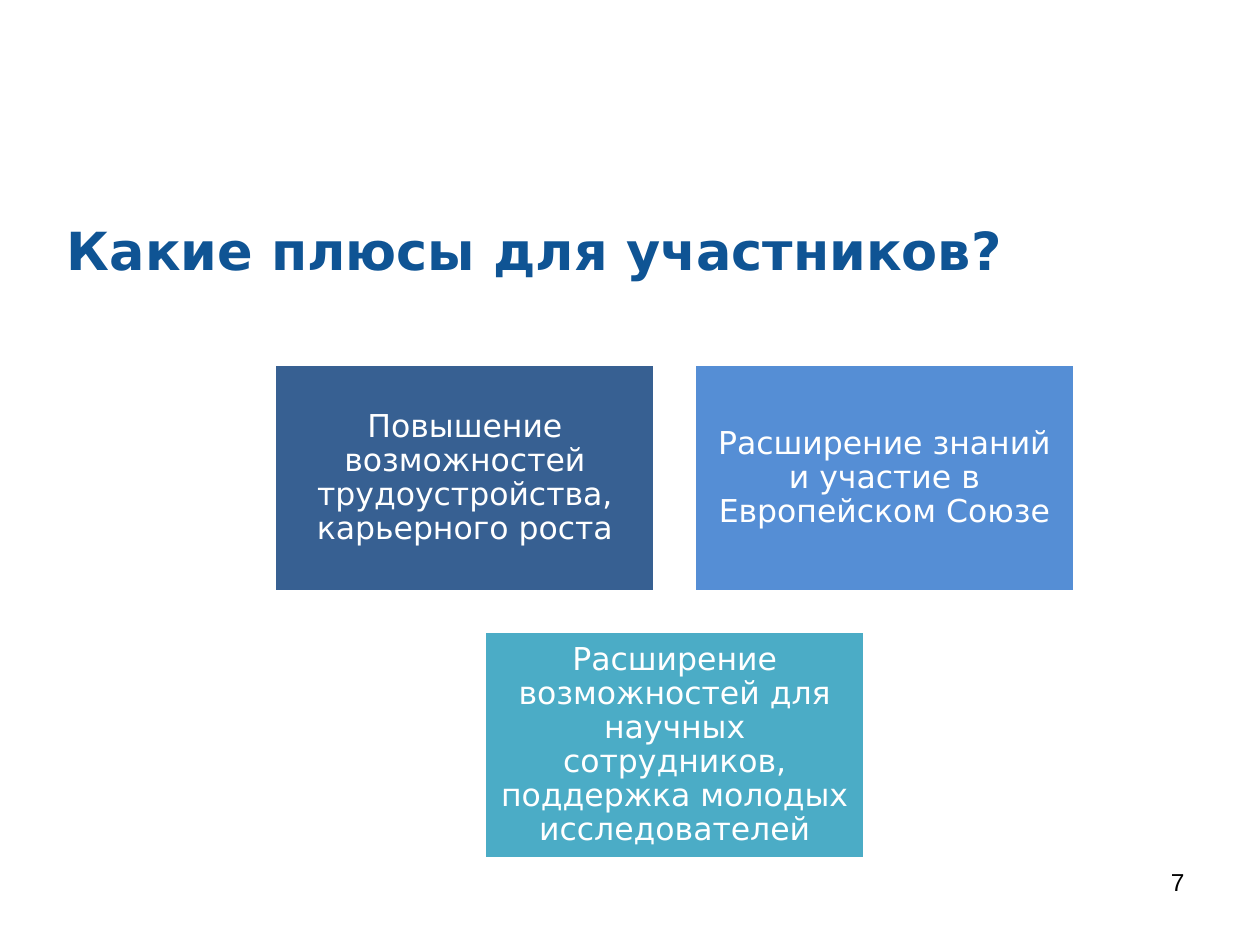
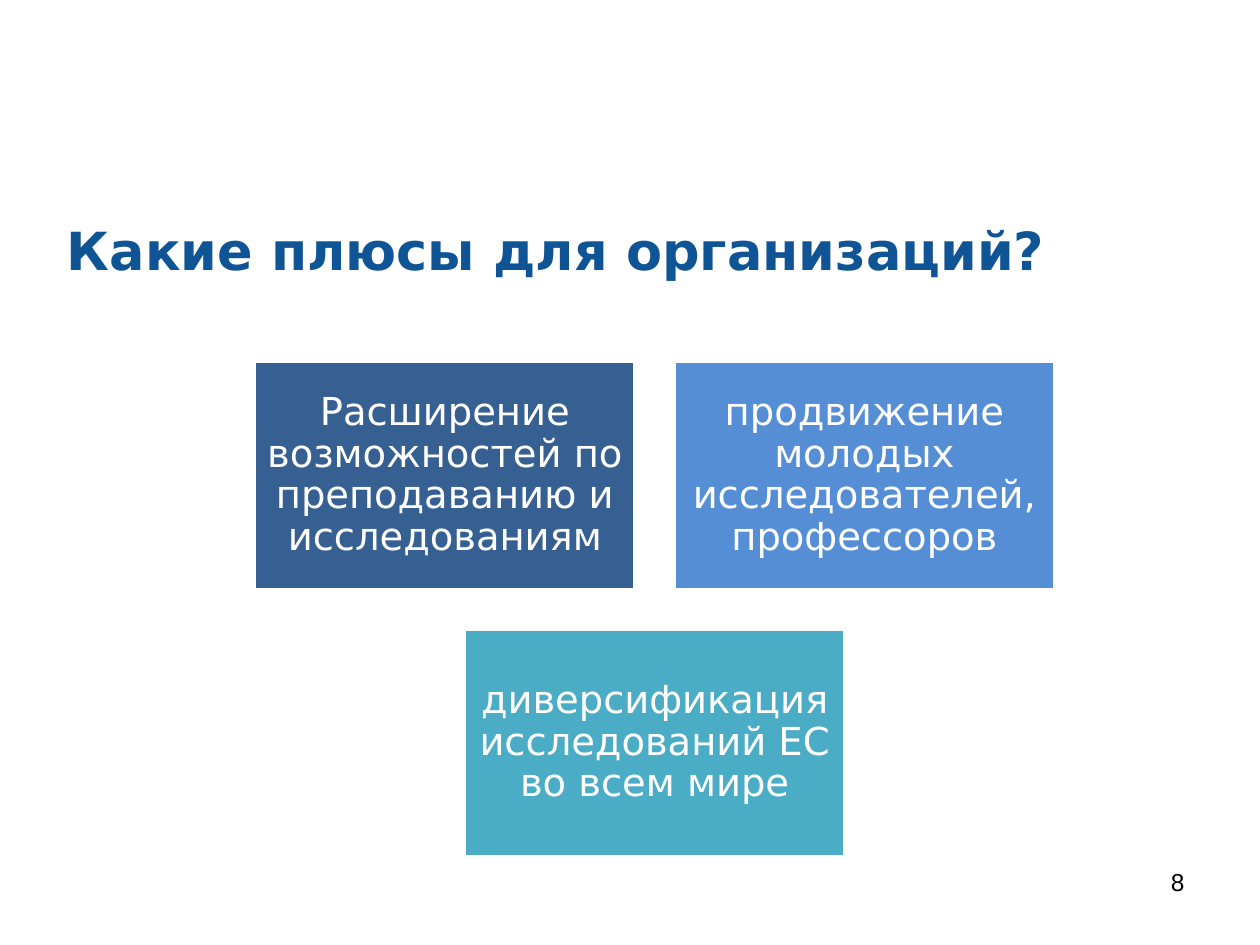
import pptx
import pptx.dml.color
import pptx.enum.shapes
import pptx.enum.text
import pptx.util

WIDTH, HEIGHT = 10, 7.5
TITLE_ONLY = 5
BODY_FONT, NUMBER_FONT = "DejaVu Sans", "Arial"
TITLE_COLOR, WHITE, BLACK = "0F5494", "FFFFFF", "000000"
CARD_COLORS = ("376092", "558ED5", "4BACC6")
CARD_WIDTH, CARD_HEIGHT, CARD_GAP = 3.02, 1.81, 0.31
ALIGN = pptx.enum.text.PP_ALIGN
ANCHOR = pptx.enum.text.MSO_ANCHOR

SLIDES = (
    dict(number=7, title="Какие плюсы для участников?",
         left=2.18, top=2.89, size=18, inset=0.07,
         cards=("Повышение возможностей трудоустройства, карьерного роста",
                "Расширение знаний и участие в Европейском Союзе",
                "Расширение возможностей для научных сотрудников, "
                "поддержка молодых исследователей")),
    dict(number=8, title="Какие плюсы для организаций?",
         left=2.02, top=2.87, size=22, inset=0.09,
         cards=("Расширение возможностей по преподаванию и исследованиям",
                "продвижение молодых исследователей, профессоров",
                "диверсификация исследований ЕС во всем мире")),
)


def color(value):
    return pptx.dml.color.RGBColor.from_string(value)


def inches(*lengths):
    return [pptx.util.Inches(length) for length in lengths]


def write(shape, text, *, size, fill, font=BODY_FONT, bold=False,
          align=ALIGN.LEFT, anchor=ANCHOR.TOP, spacing=1.0, insets=(0.1, 0.05)):
    """Put one formatted paragraph in a shape; insets are horizontal, vertical."""
    frame = shape.text_frame
    frame.word_wrap = True
    frame.auto_size = pptx.enum.text.MSO_AUTO_SIZE.NONE
    frame.vertical_anchor = anchor
    frame.margin_left = frame.margin_right = pptx.util.Inches(insets[0])
    frame.margin_top = frame.margin_bottom = pptx.util.Inches(insets[1])
    para = frame.paragraphs[0]
    para.alignment = align
    para.line_spacing = spacing
    span = para.add_run()
    span.text = text
    span.font.name = font
    span.font.size = pptx.util.Pt(size)
    span.font.bold = bold
    span.font.color.rgb = color(fill)


def add_title(page, text):
    title = page.shapes.title
    title.left, title.top, title.width, title.height = inches(0.43, 1.47, 9, 1.02)
    write(title, text, size=30, fill=TITLE_COLOR, bold=True, anchor=ANCHOR.MIDDLE)


def add_page_number(page, number):
    box = page.shapes.add_textbox(*inches(7.17, 6.83, 2.33, 0.52))
    write(box, str(number), size=14, fill=BLACK, font=NUMBER_FONT, align=ALIGN.RIGHT)


def add_card(page, left, top, text, fill, size, inset):
    card = page.shapes.add_shape(
        pptx.enum.shapes.MSO_SHAPE.RECTANGLE,
        *inches(left, top, CARD_WIDTH, CARD_HEIGHT))
    card.shadow.inherit = False
    card.fill.solid()
    card.fill.fore_color.rgb = color(fill)
    card.line.color.rgb = color(WHITE)
    card.line.width = pptx.util.Pt(2)
    write(card, text, size=size, fill=WHITE, align=ALIGN.CENTER,
          anchor=ANCHOR.MIDDLE, spacing=0.9, insets=(inset, inset))


def add_cards(page, texts, left, top, size, inset):
    """Two cards side by side, with the third centred below them."""
    cells = ((0, 0), (1, 0), (0.5, 1))
    for (column, row), text, fill in zip(cells, texts, CARD_COLORS):
        add_card(page, left + column * (CARD_WIDTH + CARD_GAP),
                 top + row * (CARD_HEIGHT + CARD_GAP), text, fill, size, inset)


def main():
    deck = pptx.Presentation()
    deck.slide_width, deck.slide_height = inches(WIDTH, HEIGHT)
    for content in SLIDES:
        page = deck.slides.add_slide(deck.slide_layouts[TITLE_ONLY])
        add_title(page, content["title"])
        add_page_number(page, content["number"])
        add_cards(page, content["cards"], content["left"], content["top"],
                  content["size"], content["inset"])
    deck.save("out.pptx")


if __name__ == "__main__":
    main()
